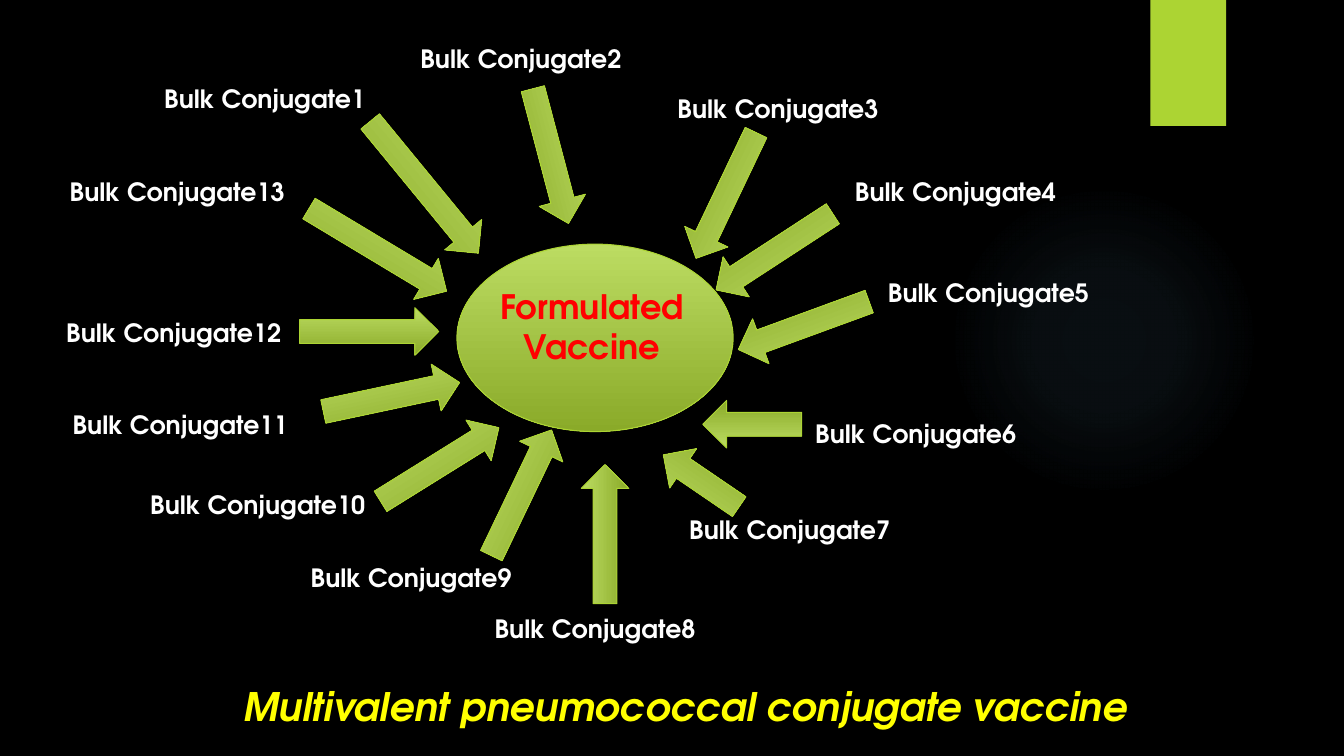
import pptx
import pptx.util
import pptx.dml.color
import pptx.enum.shapes
import pptx.enum.text
import pptx.oxml
import pptx.oxml.ns

Pt = pptx.util.Pt
SHAPE = pptx.enum.shapes.MSO_SHAPE
ALIGN = pptx.enum.text.PP_ALIGN
FONT = "TeX Gyre Adventor"
COLORS = {
    "back": "000000", "glow": "7AC4F0", "lime": "ACD433", "light": "BCDC62",
    "dark": "8AAA29", "label": "FFFFFF", "core": "FF0000", "title": "FFFF00",
}
LABELS = [
    (70, 29), (253, 0), (436.6, 36), (563.4, 95), (587, 167), (535, 268),
    (445, 336.6), (306, 407), (174.6, 371), (60, 318.6), (4.6, 261.7),
    (0, 196), (2.5, 95),
]
ARROWS = [
    (202, 89.6, 121.7, 50.6), (303.4, 67.3, 99.4, 75.2),
    (428.7, 95.4, 99.4, 115.5), (463.3, 135.7, 99.4, 146.9),
    (484.2, 188.3, 99.4, 159.9), (461.8, 258.8, 70.6, 180),
    (428, 299.2, 65.5, 214.3), (342.3, 337.3, 99.4, 270),
    (282.6, 307.8, 99.4, 295.6), (224.2, 287.6, 99.4, 328.1),
    (189.7, 239.4, 99.4, 348), (173.8, 192.6, 99.4, 0),
    (172.4, 134.3, 114.5, 31),
]


def color(name):
    """Return the named colour."""
    return pptx.dml.color.RGBColor.from_string(COLORS[name])


def write(shape, text, size=18, tint="label", align=ALIGN.LEFT, wrap=True, italic=False):
    """Fill a text shape, one paragraph per line."""
    frame = shape.text_frame
    frame.text = text
    frame.word_wrap = wrap
    frame.auto_size = pptx.enum.text.MSO_AUTO_SIZE.SHAPE_TO_FIT_TEXT
    frame.vertical_anchor = pptx.enum.text.MSO_ANCHOR.TOP
    for para in frame.paragraphs:
        para.alignment = align
        for run in para.runs:
            font = run.font
            font.name, font.size = FONT, Pt(size)
            font.bold, font.italic = True, italic
            font.color.rgb = color(tint)


def label(slide, box, text, **form):
    """Add a text box."""
    write(slide.shapes.add_textbox(*map(Pt, box)), text, **form)


def draw(slide, kind, box):
    """Add a preset shape without a shadow."""
    shape = slide.shapes.add_shape(kind, *map(Pt, box))
    shape.shadow.inherit = False
    return shape


def shade(slide, kind, box):
    """Add a shape with the green gradient and outline."""
    shape = draw(slide, kind, box)
    shape.fill.gradient()
    shape.fill.gradient_angle = 270
    for stop, name, spot in zip(shape.fill.gradient_stops, ("light", "dark"), (0, 1)):
        stop.color.rgb = color(name)
        stop.position = spot
    shape.line.color.rgb = color("lime")
    shape.line.width = Pt(0.75)
    return shape


def glow(slide, box):
    """Add the faint round glow."""
    shape = draw(slide, SHAPE.OVAL, box)
    shape.line.fill.background()
    stops = "".join(
        f'<a:gs pos="{spot * 1000}"><a:srgbClr val="{COLORS["glow"]}">'
        f'<a:alpha val="{alpha * 1000}"/></a:srgbClr></a:gs>'
        for spot, alpha in ((0, 7), (36, 6), (69, 0), (100, 0))
    )
    grad = pptx.oxml.parse_xml(
        f'<a:gradFill {pptx.oxml.ns.nsdecls("a")}><a:gsLst>{stops}</a:gsLst>'
        '<a:path path="circle"><a:fillToRect l="50000" t="50000" r="50000" b="50000"/>'
        '</a:path></a:gradFill>'
    )
    shape.element.spPr.find(pptx.oxml.ns.qn("a:prstGeom")).addnext(grad)


def flag(slide, box):
    """Add the plain block at the top edge."""
    shape = draw(slide, SHAPE.RECTANGLE, box)
    shape.fill.solid()
    shape.fill.fore_color.rgb = color("lime")
    shape.line.fill.background()


def wheel(slide, box):
    """Place the labels, arrows and core in the box."""
    left, top = box
    for num, (x, y) in enumerate(LABELS, 1):
        wide = 159.8 if num < 10 else 169.9
        label(slide, (left + x, top + y, wide, 29), f"Bulk Conjugate{num}", wrap=False)
    for x, y, size, turn in ARROWS:
        arrow = shade(slide, SHAPE.RIGHT_ARROW, (left + x, top + y, size, 34))
        arrow.rotation = turn
    shade(slide, SHAPE.OVAL, (left + 286.2, top + 147.2, 197.3, 133.9))
    label(slide, (left + 283.3, top + 173.2, 198.7, 108.7), "Formulated\nVaccine",
          size=24, tint="core", align=ALIGN.CENTER)


def head(slide, box):
    """Move and format the title."""
    title = slide.shapes.title
    title.left, title.top, title.width, title.height = map(Pt, box)
    write(title, "Multivalent pneumococcal conjugate vaccine",
          size=28, tint="title", align=ALIGN.CENTER, italic=True)


def main():
    """Build and save the slide."""
    deck = pptx.Presentation()
    deck.slide_width, deck.slide_height = Pt(960), Pt(540)
    slide = deck.slides.add_slide(deck.slide_layouts[5])
    slide.background.fill.solid()
    slide.background.fill.fore_color.rgb = color("back")
    glow(slide, (677.5, 131.8, 221.8, 221.8))
    flag(slide, (821.8, 0, 54, 90))
    wheel(slide, (40.2, 27.2))
    head(slide, (103.7, 483.8, 771.8, 41))
    deck.save("out.pptx")


if __name__ == "__main__":
    main()
